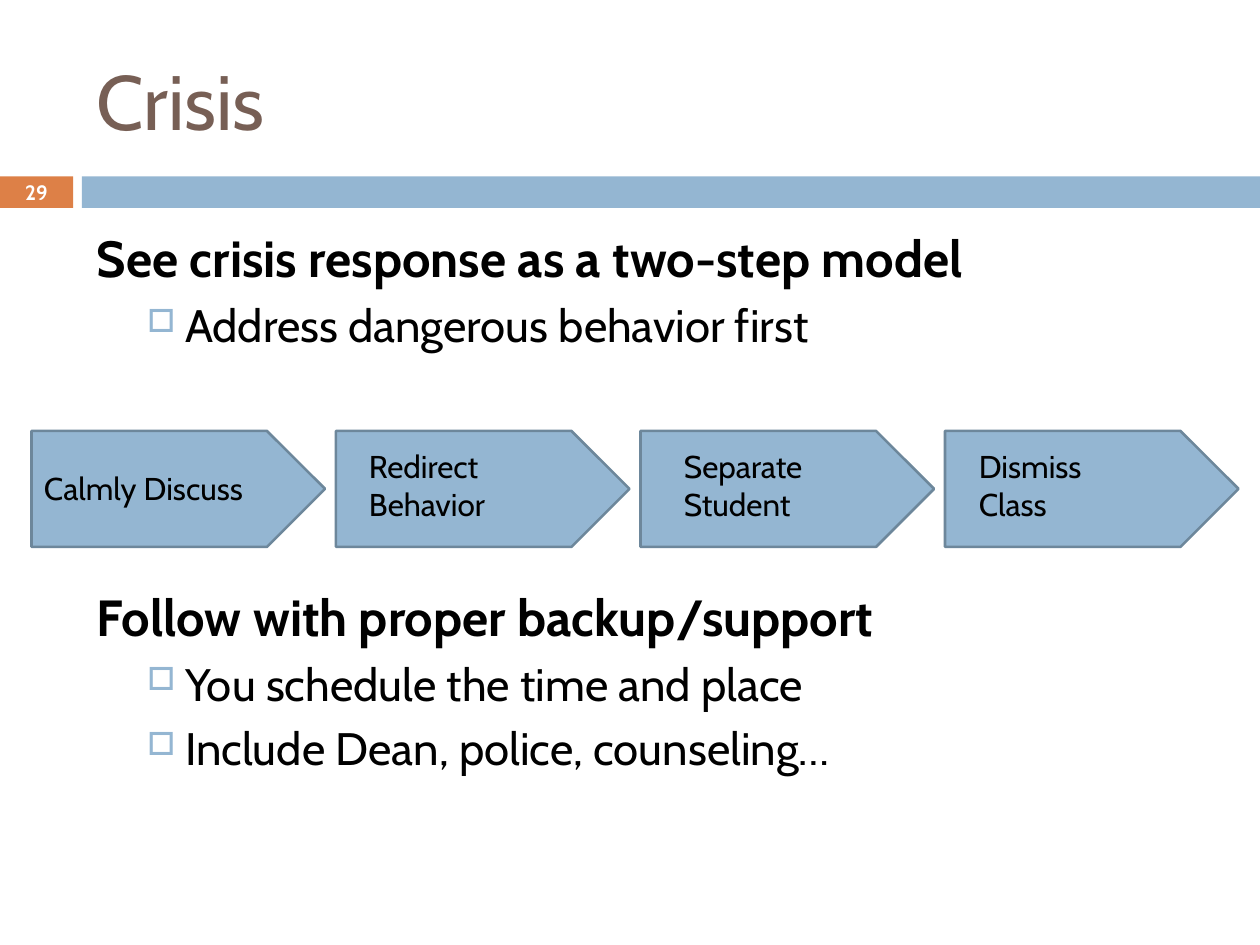
from dataclasses import dataclass

import pptx
import pptx.dml.color
import pptx.enum.shapes
import pptx.enum.text
import pptx.oxml
import pptx.oxml.ns
import pptx.util
from pptx.util import Inches

FONT = "Cabin"
BLUE, ORANGE, OUTLINE = "94B6D2", "DD8047", "6D879B"
BROWN, BLACK, WHITE = "775F55", "000000", "FFFFFF"
SHAPE = pptx.enum.shapes.MSO_SHAPE
MIDDLE = pptx.enum.text.MSO_ANCHOR.MIDDLE


@dataclass
class Step:
    lines: list[str]
    left: float
    top: float
    width: float
    height: float


@dataclass
class Point:
    text: str
    level: int
    before: float


STEPS = [
    Step(["Calmly Discuss"], 0.25, 3.67, 2.33, 0.42),
    Step(["Redirect Behavior"], 2.83, 3.5, 1.58, 0.71),
    Step(["Separate", "Student"], 5.33, 3.5, 1.33, 0.71),
    Step(["Dismiss", "Class"], 7.67, 3.5, 1.17, 0.71),
]
# The second heading leaves room above it for the row of arrows.
POINTS = [
    Point("See crisis response as a two-step model", 0, 7),
    Point("Address dangerous behavior first", 1, 5.5),
    Point("Follow with proper backup/support", 0, 133.5),
    Point("You schedule the time and place", 1, 5.5),
    Point("Include Dean, police, counseling…", 1, 5.5),
]


def rgb(value: str) -> pptx.dml.color.RGBColor:
    return pptx.dml.color.RGBColor.from_string(value)


def add_block(s, kind, left: float, top: float, width: float, height: float,
              fill: str, line: str | None = None) -> None:
    sp = s.shapes.add_shape(kind, Inches(left), Inches(top), Inches(width), Inches(height))
    sp.shadow.inherit = False
    sp.fill.solid()
    sp.fill.fore_color.rgb = rgb(fill)
    if line:
        sp.line.color.rgb = rgb(line)
        sp.line.width = pptx.util.Pt(1.5)
    else:
        sp.line.fill.background()


def add_box(s, left: float, top: float, width: float, height: float):
    """Add a wrapping text box and return its text frame."""
    sp = s.shapes.add_textbox(Inches(left), Inches(top), Inches(width), Inches(height))
    tf = sp.text_frame
    tf.word_wrap = True
    return tf


def add_run(p, text: str, size: float, color: str = BLACK, bold: bool = False) -> None:
    r = p.add_run()
    r.text = text
    r.font.name = FONT
    r.font.size = pptx.util.Pt(size)
    r.font.bold = bold
    r.font.color.rgb = rgb(color)


def next_paragraph(tf, index: int):
    return tf.add_paragraph() if index else tf.paragraphs[0]


def add_bullet(p) -> None:
    """Give a paragraph a hanging, pale blue square bullet."""
    ppr = p._p.get_or_add_pPr()
    ppr.set("marL", str(Inches(0.7)))
    ppr.set("indent", str(Inches(-0.3)))
    ns = pptx.oxml.ns.nsdecls("a")
    for xml in (f'<a:buClr {ns}><a:srgbClr val="{BLUE}"/></a:buClr>',
                f'<a:buSzPct {ns} val="70000"/>',
                f'<a:buChar {ns} char="□"/>'):
        ppr.append(pptx.oxml.parse_xml(xml))


def add_points(s, points: list[Point]) -> None:
    tf = add_box(s, 0.67, 1.75, 8.92, 4.92)
    for i, point in enumerate(points):
        p = next_paragraph(tf, i)
        p.level = point.level
        p.space_before = pptx.util.Pt(point.before)
        if point.level:
            add_bullet(p)
            add_run(p, point.text, 26)
        else:
            add_run(p, point.text, 29, bold=True)


def add_steps(s, steps: list[Step]) -> None:
    width, pitch = 2.33, 29 / 12
    for i in range(len(steps)):
        add_block(s, SHAPE.PENTAGON, 0.25 + i * pitch, 3.42, width, 0.92, BLUE, OUTLINE)
    for step in steps:
        tf = add_box(s, step.left, step.top, step.width, step.height)
        for i, line in enumerate(step.lines):
            add_run(next_paragraph(tf, i), line, 18)


def main() -> None:
    prs = pptx.Presentation()
    prs.slide_width, prs.slide_height = Inches(10), Inches(7.5)
    s = prs.slides.add_slide(prs.slide_layouts[6])

    add_block(s, SHAPE.RECTANGLE, 0, 1.4, 0.58, 0.25, ORANGE)
    add_block(s, SHAPE.RECTANGLE, 0.65, 1.4, 9.35, 0.25, BLUE)

    title = add_box(s, 0.67, 0.25, 8.92, 1.08)
    title.vertical_anchor = MIDDLE
    add_run(title.paragraphs[0], "Crisis", 44, BROWN)

    add_points(s, POINTS)
    add_steps(s, STEPS)

    number = add_box(s, 0, 1.39, 0.58, 0.27)
    number.vertical_anchor = MIDDLE
    number.paragraphs[0].alignment = pptx.enum.text.PP_ALIGN.CENTER
    add_run(number.paragraphs[0], "29", 11.9, WHITE, bold=True)

    prs.save("out.pptx")


if __name__ == "__main__":
    main()
